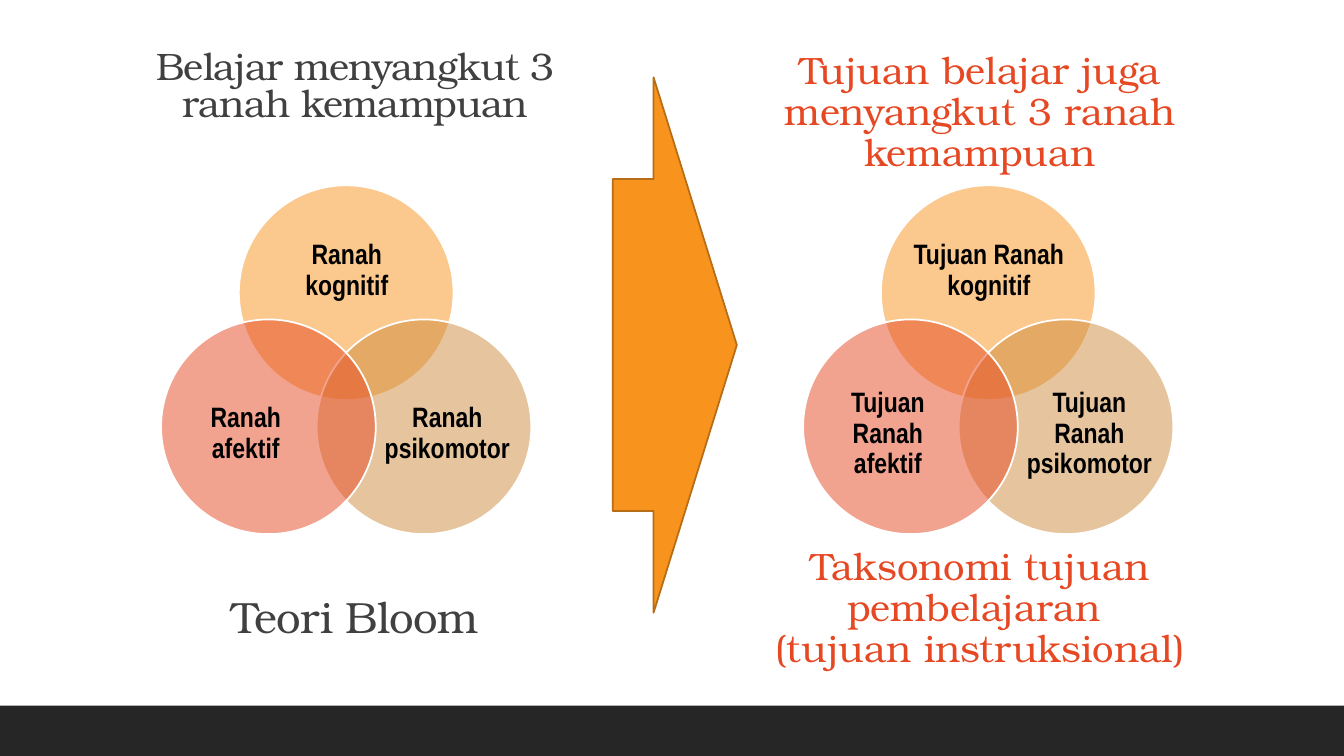
"""Build a slide that sets three learning domains beside their learning goals."""
from dataclasses import dataclass

from lxml import etree
from pptx import Presentation
from pptx import util as u
from pptx.dml.color import RGBColor
from pptx.enum import shapes, text
from pptx.oxml import ns

SERIF, SANS = "TeX Gyre Bonum", "Arial Narrow"
GREY, RED, ORANGE, TAN = "404040", "E64823", "F8931D", "CE8D3E"
DISC = 5.41
SHIFT = 16.18


@dataclass
class Box:
    x: float
    y: float
    w: float
    h: float

    def cm(self) -> list:
        return [u.Cm(n) for n in (self.x, self.y, self.w, self.h)]


@dataclass
class Style:
    font: str
    size: float
    color: str
    lead: float
    track: int = 0
    bold: bool = False
    pad: bool = True


@dataclass
class Title:
    box: Box
    lines: list[str]
    style: Style
    low: bool = False


@dataclass
class Ring:
    x: float
    y: float
    color: str
    label: Box


LABEL = Style(SANS, 20, "000000", 0.9, bold=True, pad=False)
HEAD = Style(SERIF, 27.3, GREY, 0.8, track=-50)
FOOT = Style(SERIF, 31.2, GREY, 0.8, track=-50)
GOAL = Style(SERIF, 27.2, RED, 0.9)

TITLES = [
    Title(Box(3.45, 1.17, 11, 2.5), ["Belajar menyangkut 3 ranah kemampuan"], HEAD),
    Title(Box(3.45, 14.51, 11, 1.8), ["Teori Bloom"], FOOT, low=True),
    Title(Box(19.2, 1.17, 11, 3.4), ["Tujuan belajar juga menyangkut 3 ranah kemampuan"], GOAL),
    Title(Box(19.2, 13.64, 11, 3.4),
          ["Taksonomi tujuan pembelajaran ", "(tujuan instruksional)"], GOAL, low=True),
]
RINGS = [
    Ring(6.02, 4.67, ORANGE, Box(6.76, 5.61, 3.96, 2.44)),
    Ring(7.98, 8.05, TAN, Box(9.65, 9.45, 3.25, 2.97)),
    Ring(4.06, 8.05, RED, Box(4.57, 9.45, 3.25, 2.97)),
]
VENNS = [
    ["Ranah kognitif", "Ranah psikomotor", "Ranah afektif"],
    ["Tujuan Ranah kognitif", "Tujuan Ranah psikomotor", "Tujuan Ranah afektif"],
]


def rgb(code: str) -> RGBColor:
    return RGBColor.from_string(code)


def apply(item, form: dict) -> None:
    for key, val in form.items():
        setattr(item, key, val)


def draw_shape(slide, kind, box: Box, fill: str, line: str = "", alpha: int = 100):
    shape = slide.shapes.add_shape(kind, *box.cm())
    shape.shadow.inherit = False
    shape.fill.solid()
    shape.fill.fore_color.rgb = rgb(fill)
    if alpha < 100:
        tint = shape._element.spPr.find(".//" + ns.qn("a:srgbClr"))
        etree.SubElement(tint, ns.qn("a:alpha"), val=str(alpha * 1000))
    if line:
        shape.line.color.rgb = rgb(line)
        shape.line.width = u.Pt(1.25)
    else:
        shape.line.fill.background()
    return shape


def draw_text(slide, box: Box, lines: list[str], style: Style, anchor) -> None:
    frame = slide.shapes.add_textbox(*box.cm()).text_frame
    apply(frame, {"word_wrap": True, "vertical_anchor": anchor})
    if not style.pad:
        apply(frame, {f"margin_{side}": 0 for side in ("left", "top", "right", "bottom")})
    frame.text = "\n".join(lines)
    for para in frame.paragraphs:
        apply(para, {"alignment": text.PP_ALIGN.CENTER, "line_spacing": style.lead})
        for run in para.runs:
            apply(run.font, {"name": style.font, "size": u.Pt(style.size), "bold": style.bold})
            run.font.color.rgb = rgb(style.color)
            if style.track:
                run._r.get_or_add_rPr().set("spc", str(style.track))


def draw_venn(slide, shift: float, names: list[str]) -> None:
    for ring, name in zip(RINGS, names):
        disc = Box(ring.x + shift, ring.y, DISC, DISC)
        draw_shape(slide, shapes.MSO_SHAPE.OVAL, disc, ring.color, "FFFFFF", 50)
        spot = ring.label
        draw_text(slide, Box(spot.x + shift, spot.y, spot.w, spot.h), [name], LABEL,
                  text.MSO_ANCHOR.MIDDLE)


def main() -> None:
    deck = Presentation()
    apply(deck, {"slide_width": u.Cm(33.87), "slide_height": u.Cm(19.05)})
    slide = deck.slides.add_slide(deck.slide_layouts[6])
    draw_shape(slide, shapes.MSO_SHAPE.RECTANGLE, Box(0, 17.78, 33.87, 1.27), "262626")
    for title in TITLES:
        anchor = text.MSO_ANCHOR.BOTTOM if title.low else text.MSO_ANCHOR.TOP
        draw_text(slide, title.box, title.lines, title.style, anchor)
    arrow = draw_shape(slide, shapes.MSO_SHAPE.RIGHT_ARROW, Box(15.44, 1.95, 3.13, 13.49),
                       ORANGE, "B76D15")
    arrow.adjustments[0], arrow.adjustments[1] = 0.62, 0.67
    for col, names in enumerate(VENNS):
        draw_venn(slide, col * SHIFT, names)
    deck.save("out.pptx")


if __name__ == "__main__":
    main()
